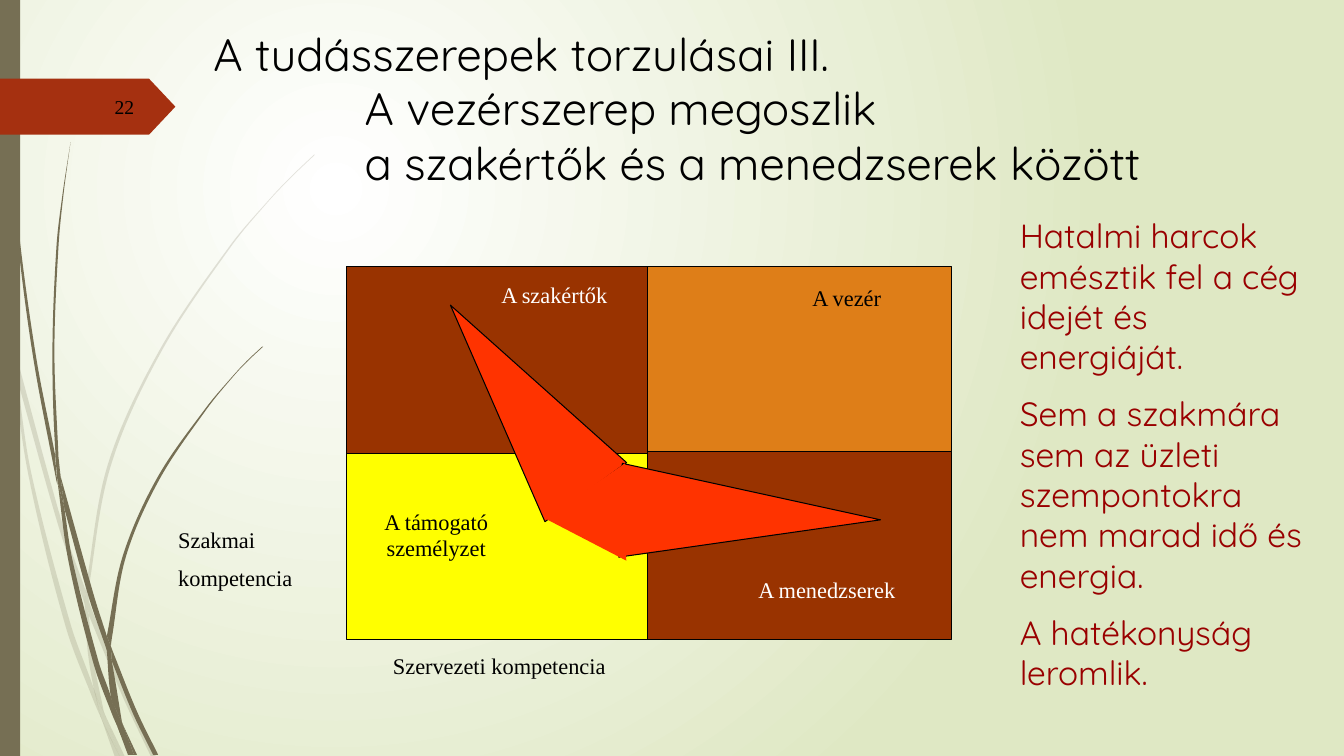
from dataclasses import dataclass
from math import dist

from lxml import etree
from pptx import Presentation
from pptx.dml.color import RGBColor
from pptx.enum.shapes import MSO_SHAPE
from pptx.enum.text import MSO_ANCHOR, PP_ALIGN
from pptx.oxml.ns import qn
from pptx.util import Pt

RECTANGLE, TRIANGLE, TAG = MSO_SHAPE.RECTANGLE, MSO_SHAPE.ISOSCELES_TRIANGLE, MSO_SHAPE.PENTAGON
LEFT, CENTER, RIGHT = PP_ALIGN.LEFT, PP_ALIGN.CENTER, PP_ALIGN.RIGHT
TOP, MIDDLE = MSO_ANCHOR.TOP, MSO_ANCHOR.MIDDLE


@dataclass(frozen=True)
class Theme:
    glow: str = "FFFFFF"
    meadow: str = "DFE8C4"
    grass: str = "766F54"
    tag: str = "A53010"
    ink: str = "000000"
    paper: str = "FFFFFF"
    brown: str = "993300"
    orange: str = "DE7E18"
    yellow: str = "FFFF00"
    red: str = "FF3300"
    note: str = "990000"
    heading_font: str = "Quicksand"
    label_font: str = "Times New Roman"
    title_size: float = 32.4
    note_size: float = 24
    label_size: float = 16
    number_size: float = 14


THEME = Theme()
GRASS_UNIT = Pt(0.72)

PALE_BLADES = [
    ([(11, 350), (9, 322), (0, 282)], [(0, 299), (10, 344), (11, 350)]),
    ([(17, 376), (58, 522), (84, 599)], [(85, 586), (62, 520), (14, 345)]),
    ([(88, 610), (123, 694), (150, 751)], [(155, 751), (127, 692), (92, 607), (88, 596)]),
    ([(119, 751)], [(124, 751), (105, 711)]),
    ([(11, 350), (28, 470), (65, 621), (92, 693), (101, 714)],
     [(99, 707), (93, 683), (70, 619), (31, 469), (17, 376)]),
    ([(84, 599), (87, 646), (93, 683), (96, 692), (105, 711)],
     [(103, 706), (91, 646), (88, 610), (84, 599)]),
    ([(88, 596), (88, 584), (110, 462), (160, 349), (229, 245), (268, 198), (290, 175), (312, 154)],
     [(312, 153), (289, 175), (268, 197), (228, 244), (158, 348), (107, 461), (85, 584), (85, 586)]),
    ([(101, 714), (114, 751)], [(119, 751)]),
    ([(84, 599), (88, 608)], [(88, 596), (85, 586)]),
    ([(93, 683), (99, 707), (101, 714), (119, 751)], [(105, 711), (96, 692)]),
]
DARK_BLADES = [
    ([(3, 0), (4, 48), (7, 110), (17, 233), (33, 355), (56, 477), (57, 481)],
     [(55, 457), (55, 453), (36, 355), (19, 232), (8, 109), (5, 48), (4, 0)]),
    ([(64, 505), (88, 592), (106, 645)], [(106, 631), (93, 590), (60, 472)]),
    ([(111, 656), (132, 708), (152, 749)], [(157, 749), (136, 706), (113, 649), (110, 641)]),
    ([(57, 477), (68, 557), (93, 659), (111, 708), (117, 722)],
     [(116, 717), (110, 691), (98, 657), (72, 556), (64, 505)]),
    ([(70, 141), (62, 193), (56, 245), (52, 349), (55, 449), (60, 472)],
     [(58, 453), (54, 349), (58, 245), (63, 193), (70, 141)]),
    ([(122, 719), (133, 749)], [(136, 749)]),
    ([(55, 449), (55, 453), (57, 477)], [(64, 505), (60, 472)]),
    ([(106, 631), (122, 551), (156, 474), (204, 405), (231, 373), (245, 358), (260, 344)],
     [(261, 344), (245, 359), (231, 374), (205, 406), (158, 476), (125, 552), (111, 633), (110, 641)]),
    ([(117, 722), (127, 749)], [(131, 749)]),
    ([(106, 645), (110, 691), (116, 706), (122, 719)], [(121, 716), (111, 656), (109, 651)]),
    ([(106, 631), (106, 645), (111, 656)], [(110, 641)]),
    ([(110, 691), (117, 722), (130, 749)], [(133, 749), (122, 719), (116, 706)]),
]


def edge_curves(knots):
    slopes = []
    for index in range(len(knots)):
        near = knots[max(index - 1, 0):index + 2]
        length = sum(dist(a, b) for a, b in zip(near, near[1:])) or 1
        slopes.append([(near[-1][axis] - near[0][axis]) / length for axis in (0, 1)])
    curves = []
    for a, b, m, n in zip(knots, knots[1:], slopes, slopes[1:]):
        reach = dist(a, b) / 3
        curves.append(([a[axis] + m[axis] * reach for axis in (0, 1)],
                       [b[axis] - n[axis] * reach for axis in (0, 1)], b))
    return curves


def bend_lines(blade, edges):
    outline = [knot for edge in edges for knot in edge]
    origin = [min(knot[axis] for knot in outline) for axis in (0, 1)]
    curves = [curve for edge in edges for curve in [None, *edge_curves(edge)]][1:]
    for line, curve in zip(list(blade.element.iter(qn("a:lnTo"))), curves):
        if curve:
            bend = etree.Element(qn("a:cubicBezTo"))
            for point in curve:
                x, y = (str(round((point[axis] - origin[axis]) * 100)) for axis in (0, 1))
                etree.SubElement(bend, qn("a:pt"), {"x": x, "y": y})
            line.getparent().replace(line, bend)


def paint(shape, fill, line=None):
    shape.shadow.inherit = False
    shape.fill.solid()
    shape.fill.fore_color.rgb = RGBColor.from_string(fill)
    if line:
        shape.line.color.rgb = RGBColor.from_string(line)
        shape.line.width = Pt(0.75)
    else:
        shape.line.fill.background()


def add_figure(page, kind, box, fill, line=None, rotation=0):
    shape = page.shapes.add_shape(kind, *map(Pt, box))
    paint(shape, fill, line)
    shape.rotation = rotation
    return shape


def add_text(page, box, lines, size, color, font=THEME.label_font, align=LEFT, anchor=TOP):
    frame = page.shapes.add_textbox(*map(Pt, box)).text_frame
    frame.word_wrap = True
    frame.vertical_anchor = anchor
    frame.text = "\n".join(lines)
    for para in frame.paragraphs:
        for name, value in {"alignment": align, "space_before": Pt(size / 2)}.items():
            setattr(para, name, value)
        for span in para.runs:
            for name, value in {"name": font, "size": Pt(size)}.items():
                setattr(span.font, name, value)
            span.font.color.rgb = RGBColor.from_string(color)
    return frame


def draw_background(page):
    fill = page.background.fill
    fill.gradient()
    for stop, color, position in zip(fill.gradient_stops, (THEME.glow, THEME.meadow), (0, 1)):
        stop.color.rgb = RGBColor.from_string(color)
        stop.position = position
    straight = next(page.element.iter(qn("a:lin")))
    radial = etree.Element(qn("a:path"), {"path": "circle"})
    sides = {"l": "50000", "t": "50000", "r": "100000", "b": "100000"}
    etree.SubElement(radial, qn("a:fillToRect"), sides)
    straight.getparent().replace(straight, radial)


def draw_grass(page, box, blades, opacity=100):
    left, top = box[:2]
    clump = page.shapes.add_group_shape()
    for edges in blades:
        outline = [(x * 100, y * 100) for edge in edges for x, y in edge]
        builder = clump.shapes.build_freeform(*outline[0], scale=GRASS_UNIT / 100)
        builder.add_line_segments(outline[1:], close=True)
        blade = builder.convert_to_shape(Pt(left), Pt(top))
        bend_lines(blade, edges)
        paint(blade, THEME.grass)
        if opacity < 100:
            color = next(blade.element.spPr.iter(qn("a:srgbClr")))
            etree.SubElement(color, qn("a:alpha"), {"val": str(opacity * 1000)})


def draw_margin(page, box):
    left, top, width, height = box
    draw_grass(page, box, PALE_BLADES, opacity=20)
    draw_grass(page, box, DARK_BLADES)
    add_figure(page, RECTANGLE, (left, top, 14.4, height), THEME.grass)
    tag = add_figure(page, TAG, (left, top + 56.2, width, 40), THEME.tag)
    tag.adjustments[0] = 0.47
    add_text(page, (left + 41.8, top + 61.9, 61.2, 28.8), ["22"], THEME.number_size,
             THEME.ink, align=RIGHT, anchor=MIDDLE)


def draw_matrix(page, box):
    left, top, width, height = box
    cell_width, cell_height = 217.4, 133.9
    columns = (left, left + width - cell_width)
    rows = (top, top + height - cell_height)
    for column, row, color in ((0, 1, THEME.yellow), (0, 0, THEME.brown),
                               (1, 0, THEME.orange), (1, 1, THEME.brown)):
        cell = (columns[column], rows[row], cell_width, cell_height)
        add_figure(page, RECTANGLE, cell, color, THEME.ink)
    for x, y, w, h, lines, color, align in (
        (-127.5, 182.1, 107.3, 55.4, ["Szakmai", "kompetencia"], THEME.ink, LEFT),
        (79.2, 7.5, 138.2, 26.6, ["A szakértők"], THEME.paper, CENTER),
        (14.2, 169, 99.4, 46, ["A támogató személyzet"], THEME.ink, CENTER),
        (288, 9.3, 138.2, 26.6, ["A vezér"], THEME.ink, CENTER),
        (273.8, 217.8, 138.2, 26.6, ["A menedzserek"], THEME.paper, CENTER),
        (-1.5, 272.1, 221, 26.6, ["Szervezeti kompetencia"], THEME.ink, CENTER),
    ):
        add_text(page, (left + x, top + y, w, h), lines, THEME.label_size, color, align=align)
    for x, y, w, h, rotation, line in (
        (86.4, 12.2, 72, 164.9, 324.1, THEME.ink),
        (254.9, 84.9, 67, 185.8, 92.1, THEME.ink),
        (151.9, 137.5, 65.5, 61.2, 27.4, None),
    ):
        add_figure(page, TRIANGLE, (left + x, top + y, w, h), THEME.red, line, rotation)


def draw_title(page, box):
    title = "\v".join(["A tudásszerepek torzulásai III.", "A vezérszerep megoszlik",
                       "a szakértők és a menedzserek között"])
    frame = add_text(page, box, [title], THEME.title_size, THEME.ink, THEME.heading_font, anchor=MIDDLE)
    para = frame.paragraphs[0]
    para.space_before = Pt(0)
    hanging = Pt(108)
    for name, value in {"marL": hanging, "indent": -hanging}.items():
        para._p.get_or_add_pPr().set(name, str(value))


def draw_notes(page, box):
    add_text(page, box, ["Hatalmi harcok emésztik fel a cég idejét és energiáját.",
                         "Sem a szakmára sem az üzleti szempontokra nem marad idő és energia.",
                         "A hatékonyság leromlik."],
             THEME.note_size, THEME.note, THEME.heading_font, anchor=MIDDLE)


def main():
    deck = Presentation()
    deck.slide_width, deck.slide_height = Pt(960), Pt(540)
    page = deck.slides.add_slide(deck.slide_layouts[6])
    draw_background(page)
    draw_margin(page, (0, 0, 125.3, 540))
    draw_matrix(page, (247.7, 190.1, 432, 266.4))
    draw_title(page, (145.4, 12.8, 727.9, 128.2))
    draw_notes(page, (721.4, 145.8, 218.9, 356.4))
    deck.save("out.pptx")


if __name__ == "__main__":
    main()
